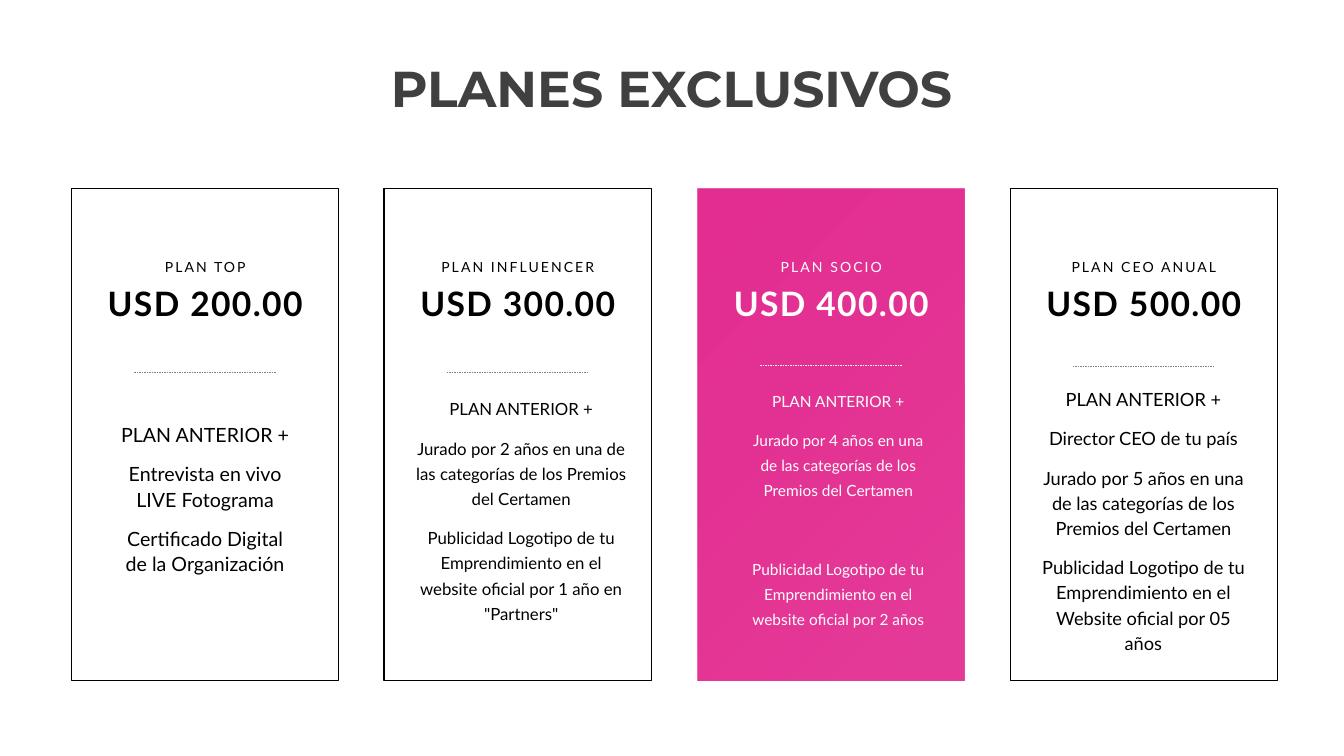
import pptx
import pptx.dml.color
import pptx.enum.dml
import pptx.enum.shapes
import pptx.enum.text
import pptx.oxml.ns
import pptx.util
from lxml import etree

PX = 9144
CARD_TOP, CARD_W, CARD_H = 187, 265, 488
COLORS = {"ink": "000000", "title": "404040", "rule": "808080", "accent": "E32D91", "light": "FFFFFF"}
AWARD = "las categorías de los Premios del Certamen"
PUBLICITY = "Publicidad Logotipo de tu Emprendimiento en el"

PLANS = [
    {"name": "PLAN TOP", "price": "USD 200.00", "rule_y": 369,
     "box": (107, 413, 193, 167), "size": 14, "gaps": (0, 10, 10),
     "benefits": ["PLAN ANTERIOR +", "Entrevista en vivo LIVE Fotograma",
                  "Certificado Digital de la Organización"]},
    {"name": "PLAN INFLUENCER", "price": "USD 300.00", "rule_y": 369,
     "box": (400, 386, 234, 247), "size": 12, "gaps": (0, 10, 10),
     "benefits": ["PLAN ANTERIOR +", f"Jurado por 2 años en una de {AWARD}",
                  f"{PUBLICITY} website oficial por 1 año en \"Partners\""]},
    {"name": "PLAN SOCIO", "price": "USD 400.00", "rule_y": 362, "featured": True,
     "box": (735, 377, 193, 167), "size": 11, "gaps": (0, 10, 38),
     "benefits": ["PLAN ANTERIOR +", f"Jurado por 4 años en una de {AWARD}",
                  f"{PUBLICITY} website oficial por 2 años"]},
    {"name": "PLAN CEO ANUAL", "price": "USD 500.00", "rule_y": 363,
     "box": (1022, 377, 224, 167), "size": 13, "gaps": (0, 10, 10, 10),
     "benefits": ["PLAN ANTERIOR +", "Director CEO de tu país",
                  f"Jurado por 5 años en una de {AWARD}",
                  f"{PUBLICITY} Website oficial por 05 años"]},
]


def px(*values):
    return [pptx.util.Emu(v * PX) for v in values]


def rgb(name):
    return pptx.dml.color.RGBColor.from_string(COLORS[name])


def place(sp, box):
    sp.left, sp.top, sp.width, sp.height = px(*box)


def setup_frame(tf, wrap=True):
    tf.word_wrap = wrap
    tf.auto_size = pptx.enum.text.MSO_AUTO_SIZE.NONE
    tf.vertical_anchor = pptx.enum.text.MSO_ANCHOR.TOP


def style(p, font, size, color, bold=False, leading=None, spacing=None):
    p.alignment = pptx.enum.text.PP_ALIGN.CENTER
    if leading:
        p.line_spacing = pptx.util.Pt(leading)
    for r in p.runs:
        r.font.name = font
        r.font.size = pptx.util.Pt(size)
        r.font.bold = bold
        r.font.color.rgb = rgb(color)
        if spacing:
            r.font._element.set("spc", str(spacing))


def add_title(s, text):
    sp = s.shapes.title
    place(sp, (375, 52, 582, 71))
    tf = sp.text_frame
    tf.text = text
    setup_frame(tf, wrap=False)
    style(tf.paragraphs[0], "Montserrat", 36, "title", bold=True)


def add_card(s, x, featured):
    sp = s.shapes.add_shape(pptx.enum.shapes.MSO_SHAPE.RECTANGLE,
                            *px(x, CARD_TOP, CARD_W, CARD_H))
    sp.shadow.inherit = False
    if not featured:
        sp.fill.background()
        sp.line.color.rgb = rgb("ink")
        sp.line.width = pptx.util.Pt(1)
        return
    sp.line.fill.background()
    sp.fill.gradient()
    sp.fill.gradient_angle = 315
    for stop, position in zip(sp.fill.gradient_stops, (0, 0.94)):
        stop.color.rgb = rgb("accent")
        stop.position = position
    end_color = list(sp.element.iter(pptx.oxml.ns.qn("a:srgbClr")))[-1]
    etree.SubElement(end_color, pptx.oxml.ns.qn("a:alpha"), val="93000")


def add_heading(s, x, name, price, color):
    sp = s.shapes.add_textbox(*px(x - 2, 221, 269, 110))
    tf = sp.text_frame
    setup_frame(tf)
    tf.text = f"{name}\n{price}"
    style(tf.paragraphs[0], "Lato", 10, color, leading=34, spacing=150)
    style(tf.paragraphs[1], "Lato", 24, color, bold=True, leading=34, spacing=100)


def add_rule(s, x, y, color):
    line = s.shapes.add_connector(pptx.enum.shapes.MSO_CONNECTOR.STRAIGHT,
                                  *px(x + 62, y, x + 203, y))
    line.line.color.rgb = rgb(color)
    line.line.width = pptx.util.Pt(0.25)
    line.line.dash_style = pptx.enum.dml.MSO_LINE.DASH
    etree.SubElement(line.element.spPr, pptx.oxml.ns.qn("a:effectLst"))


def fill_benefits(sp, plan, color):
    sp.element.getparent().append(sp.element)
    place(sp, plan["box"])
    tf = sp.text_frame
    tf.text = "\n".join(plan["benefits"])
    setup_frame(tf)
    for p, gap in zip(tf.paragraphs, plan["gaps"]):
        pPr = p._p.get_or_add_pPr()
        pPr.set("marL", "0")
        pPr.set("indent", "0")
        etree.SubElement(pPr, pptx.oxml.ns.qn("a:buNone"))
        p.space_before = pptx.util.Pt(gap)
        style(p, "Lato", plan["size"], color, leading=18)


def main():
    prs = pptx.Presentation()
    prs.slide_width, prs.slide_height = px(1333, 750)
    s = prs.slides.add_slide(prs.slide_layouts.get_by_name("Comparison"))
    add_title(s, "PLANES EXCLUSIVOS")
    bodies = [sp for sp in s.placeholders if 1 <= sp.placeholder_format.idx <= 4]
    for i, (plan, body) in enumerate(zip(PLANS, bodies)):
        x = round(71 + i * 931 / 3)
        featured = plan.get("featured", False)
        color = "light" if featured else "ink"
        add_card(s, x, featured)
        add_heading(s, x, plan["name"], plan["price"], color)
        fill_benefits(body, plan, color)
        add_rule(s, x, plan["rule_y"], "light" if featured else "rule")
    prs.save("out.pptx")


if __name__ == "__main__":
    main()
